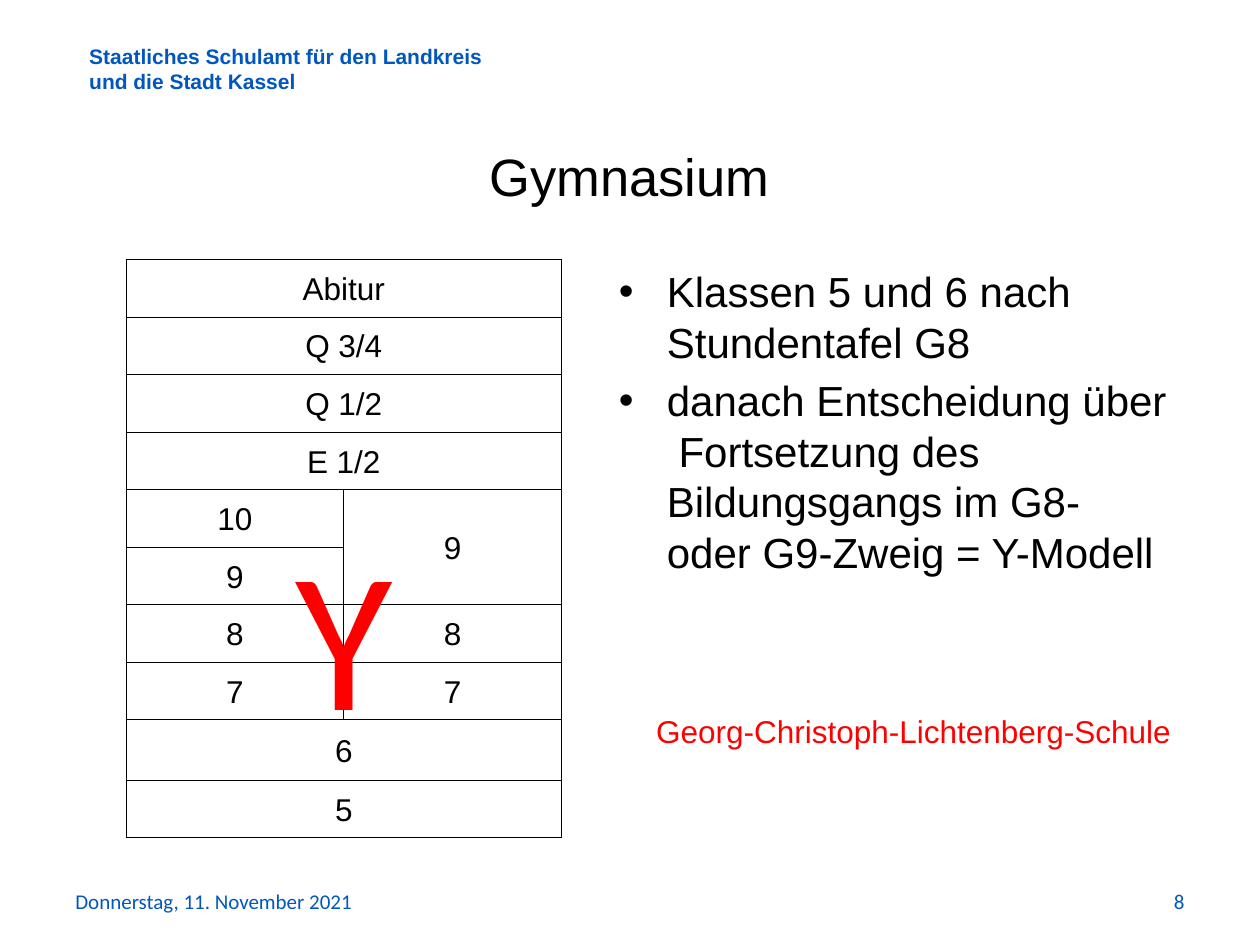
import lxml.etree
import pptx
import pptx.dml.color
import pptx.enum.text
import pptx.oxml.ns
import pptx.util

Cm = pptx.util.Cm
Pt = pptx.util.Pt
ALIGN = pptx.enum.text.PP_ALIGN
ANCHOR = pptx.enum.text.MSO_ANCHOR
BLACK = pptx.dml.color.RGBColor(0x00, 0x00, 0x00)
BLUE = pptx.dml.color.RGBColor(0x00, 0x57, 0xC0)
RED = pptx.dml.color.RGBColor(0xFF, 0x00, 0x00)


def write_text(text_frame, text, size, color, font="Arial", bold=False, align=ALIGN.LEFT):
    text_frame.text = text
    for paragraph in text_frame.paragraphs:
        paragraph.alignment = align
        for run in paragraph.runs:
            run.font.name = font
            run.font.size = Pt(size)
            run.font.bold = bold
            run.font.color.rgb = color


def add_cell_borders(cell):
    properties = cell._tc.get_or_add_tcPr()
    for position, side in enumerate(("lnL", "lnR", "lnT", "lnB")):
        line = lxml.etree.Element(pptx.oxml.ns.qn(f"a:{side}"), w=str(Pt(0.5)))
        fill = lxml.etree.SubElement(line, pptx.oxml.ns.qn("a:solidFill"))
        lxml.etree.SubElement(fill, pptx.oxml.ns.qn("a:srgbClr"), val=str(BLACK))
        properties.insert(position, line)


presentation = pptx.Presentation()
presentation.slide_width = Cm(25.4)
presentation.slide_height = Cm(19.05)
slide = presentation.slides.add_slide(presentation.slide_layouts[1])

# Title
title = slide.shapes.title
title.left, title.top, title.width, title.height = Cm(2.44), Cm(2.69), Cm(20.5), Cm(1.68)
write_text(title.text_frame, "Gymnasium", 30, BLACK, align=ALIGN.CENTER)
title.text_frame.auto_size = pptx.enum.text.MSO_AUTO_SIZE.NONE

# School years: one label spans both columns, two stand side by side
school_years = [
    ("Abitur",),
    ("Q 3/4",),
    ("Q 1/2",),
    ("E 1/2",),
    ("10", "9"),
    ("9", ""),
    ("8", "8"),
    ("7", "7"),
    ("6",),
    ("5",),
]
table = slide.shapes.add_table(
    len(school_years), 2, Cm(2.54), Cm(5.23), Cm(8.78), Cm(11.66)
).table
table.first_row = False
table.horz_banding = False
for row_index, labels in enumerate(school_years):
    table.rows[row_index].height = Cm(1.22 if labels == ("6",) else 1.16)
    for column_index in range(2):
        cell = table.cell(row_index, column_index)
        cell.fill.background()
        cell.vertical_anchor = ANCHOR.MIDDLE
        cell.margin_left = cell.margin_right = cell.margin_top = Cm(0.05)
        cell.margin_bottom = 0
        add_cell_borders(cell)
        if column_index < len(labels):
            write_text(cell.text_frame, labels[column_index], 18, BLACK, align=ALIGN.CENTER)
    if len(labels) == 1:
        table.cell(row_index, 0).merge(table.cell(row_index, 1))
table.cell(4, 1).merge(table.cell(5, 1))

# Header, footer, red Y and school name
inset, wide_inset = (0.25, 0.13), (0.53, 0.28)
left, center, right = ALIGN.LEFT, ALIGN.CENTER, ALIGN.RIGHT
text_boxes = [
    ("Staatliches Schulamt für den Landkreis\nund die Stadt Kassel",
     (1.55, 0.74, 10.77, 1.27), inset, ANCHOR.TOP, 12, BLUE, "Arial", True, left),
    ("Donnerstag, 11. November 2021",
     (1.27, 17.65, 9.42, 1.02), inset, ANCHOR.MIDDLE, 12, BLUE, "Calibri", False, left),
    ("8", (18.21, 17.65, 5.92, 1.02), inset, ANCHOR.MIDDLE, 12, BLUE, "Calibri", False, right),
    ("Y", (5.03, 5.11, 3.81, 10.29), wide_inset, ANCHOR.BOTTOM, 114, RED, "Calibri", False, center),
    ("Georg-Christoph-Lichtenberg-Schule",
     (12.7, 14.07, 11.96, 1.32), wide_inset, ANCHOR.TOP, 18, RED, "Arial", False, left),
]
for text, position, margins, anchor, size, color, font, bold, align in text_boxes:
    text_frame = slide.shapes.add_textbox(*map(Cm, position)).text_frame
    text_frame.word_wrap = True
    text_frame.vertical_anchor = anchor
    text_frame.margin_left = text_frame.margin_right = Cm(margins[0])
    text_frame.margin_top = text_frame.margin_bottom = Cm(margins[1])
    write_text(text_frame, text, size, color, font, bold, align)

# Bullet list
body = slide.placeholders[1]
body.left, body.top, body.width, body.height = Cm(12.22), Cm(5.23), Cm(11.68), Cm(6.63)
write_text(
    body.text_frame,
    "Klassen 5 und 6 nach Stundentafel G8\n"
    "danach Entscheidung über  Fortsetzung des Bildungsgangs im G8- oder G9-Zweig = Y-Modell",
    24, BLACK,
)
body.text_frame.auto_size = pptx.enum.text.MSO_AUTO_SIZE.NONE
for paragraph, space_before in zip(body.text_frame.paragraphs, (0, 4.8)):
    paragraph.space_before = Pt(space_before)
    properties = paragraph._p.get_or_add_pPr()
    properties.set("marL", str(Cm(0.97)))
    properties.set("indent", str(Cm(-0.97)))
    bullet = lxml.etree.SubElement(properties, pptx.oxml.ns.qn("a:buChar"))
    bullet.set("char", "•")

presentation.save("out.pptx")
